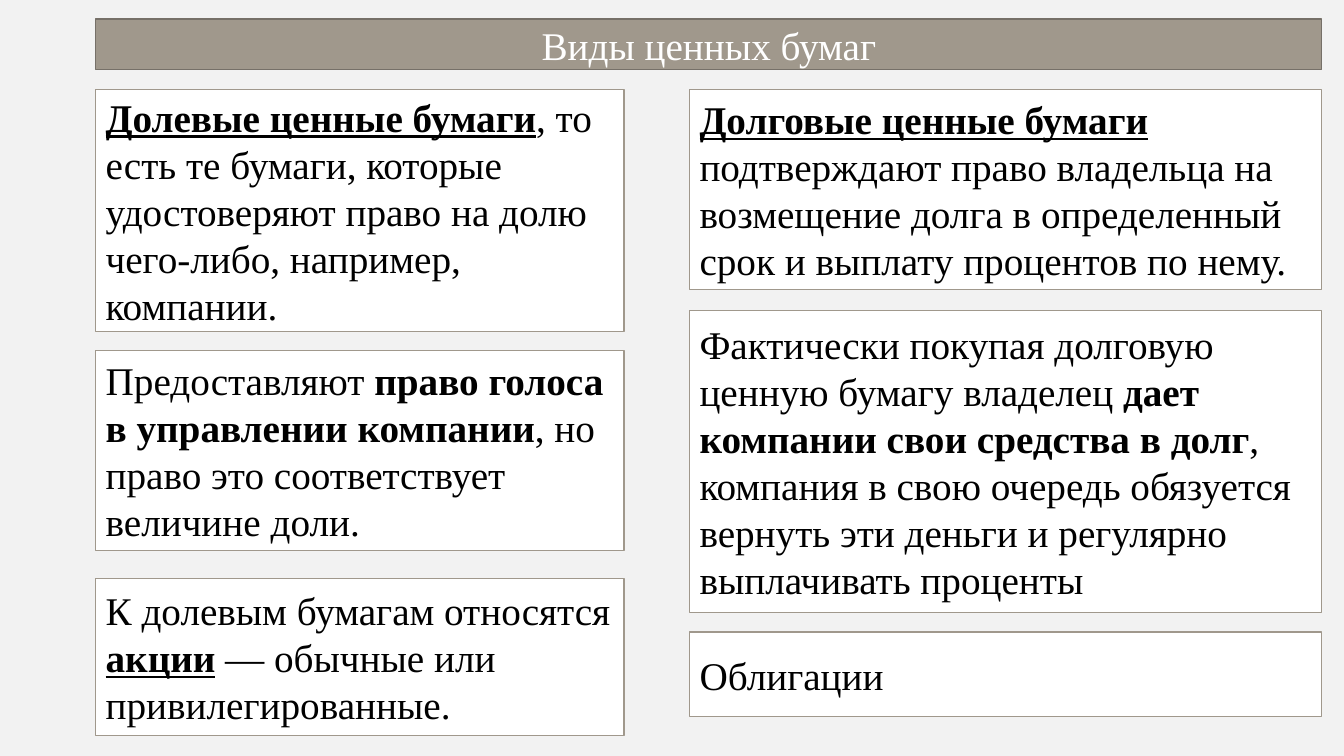
import pptx
import pptx.dml.color
import pptx.enum.shapes
import pptx.enum.text
import pptx.util
from pptx.util import Inches

FONT = "Times New Roman"
TAUPE = "A0988C"
GAP = 0.2

# Run styles
PLAIN, BOLD, TERM = (False, False), (True, False), (True, True)

# Each card: top, height, runs
EQUITY_CARDS = [
    (0.89, 2.4, [("Долевые ценные бумаги", TERM),
                 (", то есть те бумаги, которые удостоверяют право на долю "
                  "чего-либо, например, компании.", PLAIN)]),
    (3.48, 1.98, [("Предоставляют ", PLAIN),
                  ("право голоса в управлении компании", BOLD),
                  (", но право это соответствует величине доли.", PLAIN)]),
    (5.74, 1.56, [("К долевым бумагам относятся ", PLAIN),
                  ("акции", TERM),
                  (" — обычные или привилегированные.", PLAIN)]),
]
DEBT_CARDS = [
    (0.89, 1.98, [("Долговые ценные бумаги ", TERM),
                  ("подтверждают право владельца на возмещение долга в "
                   "определенный срок и выплату процентов по нему.", PLAIN)]),
    (3.08, 3, [("Фактически покупая долговую ценную бумагу владелец ", PLAIN),
               ("дает компании свои средства в долг", BOLD),
               (", компания в свою очередь обязуется вернуть эти деньги и "
                "регулярно выплачивать проценты", PLAIN)]),
    (6.27, 0.84, [("Облигации", PLAIN)]),
]


def color(hex_value):
    return pptx.dml.color.RGBColor.from_string(hex_value)


def add_card(slide, left, top, width, height, runs, fill="FFFFFF",
             border=TAUPE, ink="000000", align=pptx.enum.text.PP_ALIGN.LEFT):
    card = slide.shapes.add_shape(
        pptx.enum.shapes.MSO_SHAPE.RECTANGLE,
        Inches(left), Inches(top), Inches(width), Inches(height))
    card.shadow.inherit = False
    card.fill.solid()
    card.fill.fore_color.rgb = color(fill)
    card.line.color.rgb = color(border)
    card.line.width = pptx.util.Pt(1)
    frame = card.text_frame
    frame.word_wrap = True
    frame.vertical_anchor = pptx.enum.text.MSO_ANCHOR.MIDDLE
    paragraph = frame.paragraphs[0]
    paragraph.alignment = align
    for wording, (bold, underline) in runs:
        run = paragraph.add_run()
        run.text = wording
        run.font.name = FONT
        run.font.size = pptx.util.Pt(28)
        run.font.color.rgb = color(ink)
        run.font.bold = bold
        run.font.underline = underline


def add_heading(slide, left, top, width, height):
    add_card(slide, left, top, width, height, [("Виды ценных бумаг", PLAIN)],
             fill=TAUPE, border="767068", ink="FFFFFF",
             align=pptx.enum.text.PP_ALIGN.CENTER)


def add_column(slide, left, width, cards):
    for top, height, runs in cards:
        add_card(slide, left, top, width, height, runs)


def main():
    deck = pptx.Presentation()
    deck.slide_width, deck.slide_height = Inches(13.33), Inches(7.5)
    slide = deck.slides.add_slide(deck.slide_layouts[6])
    slide.background.fill.solid()
    slide.background.fill.fore_color.rgb = color("F2F2F2")

    # Heading bar over the two columns
    add_heading(slide, 0.95, 0.19, 12.16, 0.5)
    add_column(slide, 0.95, 5.24, EQUITY_CARDS)
    add_column(slide, 6.84, 6.27, DEBT_CARDS)
    deck.save("out.pptx")


if __name__ == "__main__":
    main()
